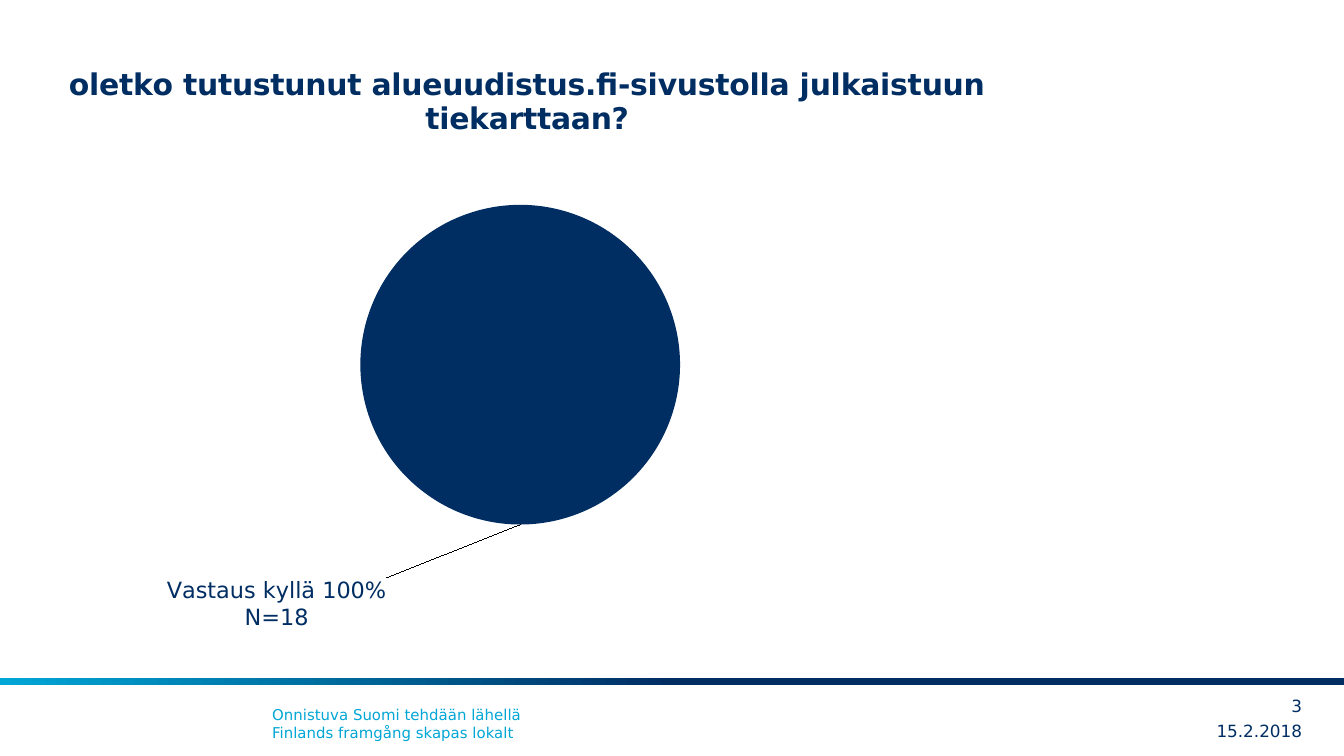
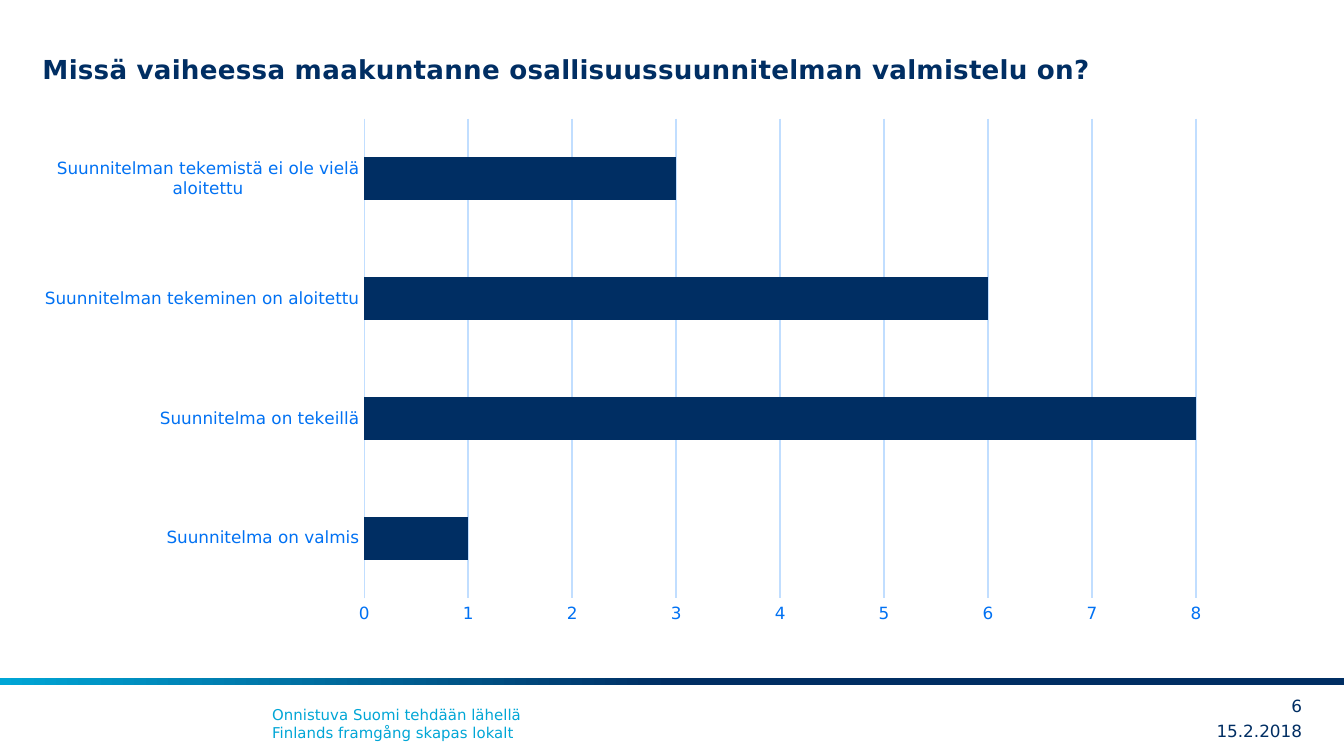
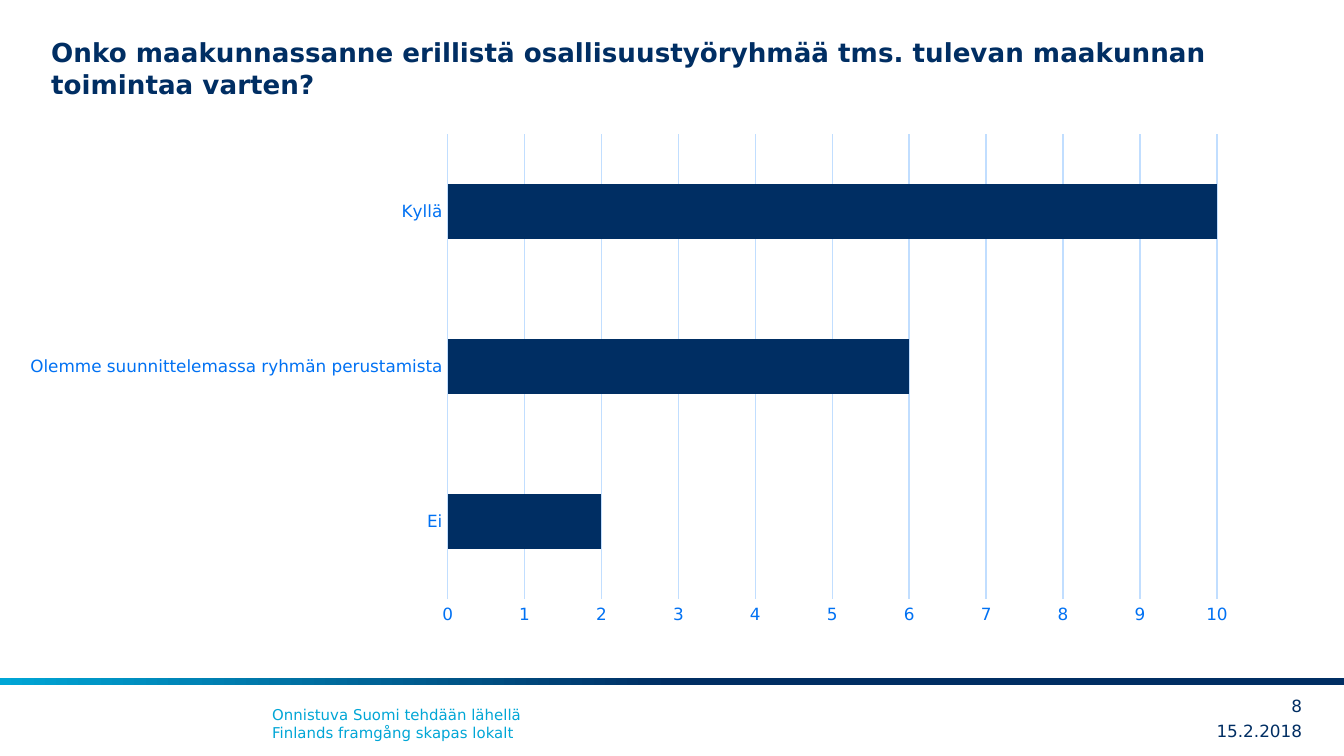
from dataclasses import dataclass

from lxml.etree import SubElement
from pptx import Presentation
from pptx.chart.data import CategoryChartData
from pptx.dml.color import RGBColor
from pptx.enum.chart import XL_CHART_TYPE, XL_LABEL_POSITION, XL_TICK_MARK
from pptx.enum.shapes import MSO_SHAPE
from pptx.enum.text import MSO_ANCHOR, PP_ALIGN
from pptx.oxml.ns import qn
from pptx.util import Emu, Pt

EMU_PER_PX = 914400 / 134.4
WIDTH, HEIGHT = 1344, 756


@dataclass(frozen=True)
class Theme:
    font: str = "DejaVu Sans"
    navy: RGBColor = RGBColor(0x00, 0x2E, 0x63)
    cyan: RGBColor = RGBColor(0x00, 0xA6, 0xD6)
    axis: RGBColor = RGBColor(0x00, 0x71, 0xF3)
    grid: RGBColor = RGBColor(0xC1, 0xDE, 0xFF)
    pie_title: int = 16
    title: int = 14
    label: int = 12
    chart: int = 10
    small: int = 9
    slogan: int = 8
    grid_line: float = 0.75


def px(length):
    return Emu(round(length * EMU_PER_PX))


def place(parent, index, inner=False, **fractions):
    """Give a chart part a manual layout, in fractions of the chart."""
    for previous in parent.findall(qn("c:layout")):
        parent.remove(previous)
    layout = parent.makeelement(qn("c:layout"))
    parent.insert(index, layout)
    manual = SubElement(layout, qn("c:manualLayout"))
    if inner:
        SubElement(manual, qn("c:layoutTarget"), val="inner")
    if index == 0 or parent.tag == qn("c:title"):
        for mode in ("xMode", "yMode"):
            SubElement(manual, qn(f"c:{mode}"), val="edge")
    for name, value in fractions.items():
        SubElement(manual, qn(f"c:{name}"), val=str(value))


class Deck:
    def __init__(self, theme):
        self.theme = theme
        self.prs = Presentation()
        self.prs.slide_width, self.prs.slide_height = px(WIDTH), px(HEIGHT)
        self.slide = None

    def style(self, font, size, color, bold=False):
        font.name, font.size, font.bold = self.theme.font, Pt(size), bold
        font.color.rgb = color

    def new_slide(self, number):
        t = self.theme
        self.slide = self.prs.slides.add_slide(self.prs.slide_layouts[6])
        self.band(678, 7)
        self.text(259, 699, 879, 50, ["Onnistuva Suomi tehdään lähellä",
                                      "Finlands framgång skapas lokalt"], t.slogan, t.cyan)
        self.corner(1169, 716, 133, "15.2.2018")
        self.corner(1245, 691, 57, str(number))

    def band(self, top, height):
        band = self.slide.shapes.add_shape(MSO_SHAPE.RECTANGLE, 0, px(top), px(WIDTH), px(height))
        band.shadow.inherit = False
        band.line.fill.background()
        band.fill.gradient()
        band.fill.gradient_angle = 180
        stops = ((0.5, self.theme.navy), (1, self.theme.cyan))
        for stop, (position, color) in zip(band.fill.gradient_stops, stops):
            stop.position, stop.color.rgb = position, color

    def text(self, left, top, width, height, lines, size, color, bold=False):
        box = self.slide.shapes.add_textbox(px(left), px(top), px(width), px(height))
        frame = box.text_frame
        frame.word_wrap = True
        paragraph = frame.paragraphs[0]
        for i, line in enumerate(lines):
            if i:
                paragraph.add_line_break()
            run = paragraph.add_run()
            run.text = line
            self.style(run.font, size, color, bold)
        return frame

    def corner(self, left, top, width, words):
        frame = self.text(left, top, width, 29, [words], self.theme.small, self.theme.navy)
        frame.margin_left = frame.margin_top = frame.margin_right = frame.margin_bottom = 0
        frame.vertical_anchor = MSO_ANCHOR.MIDDLE
        frame.paragraphs[0].alignment = PP_ALIGN.RIGHT

    def chart(self, kind, box, answers, plot_area):
        data = CategoryChartData(number_format="0")
        data.categories = list(answers)
        data.add_series("Series 1", list(answers.values()))
        chart = self.slide.shapes.add_chart(kind, *map(px, box), data).chart
        self.style(chart.font, self.theme.chart, self.theme.navy)
        chart.has_legend = chart.has_title = False
        x, y, w, h = plot_area
        place(chart.plots[0]._element.getparent(), 0, inner=True, x=x, y=y, w=w, h=h)
        return chart

    def chart_title(self, chart, words, size, x, y):
        chart.has_title = True
        run = chart.chart_title.text_frame.paragraphs[0].add_run()
        run.text = words
        self.style(run.font, size, self.theme.navy, bold=True)
        place(chart.chart_title._element, 1, x=x, y=y)

    def pie(self, box, answers, plot_area, explosion):
        chart = self.chart(XL_CHART_TYPE.PIE, box, answers, plot_area)
        plot = chart.plots[0]
        plot.vary_by_categories = False
        series = plot.series[0]
        fill = series.points[0].format.fill
        fill.solid()
        fill.fore_color.rgb = self.theme.navy
        exploded = series._element.makeelement(qn("c:explosion"), val=str(explosion))
        series._element.find(qn("c:dPt")).addprevious(exploded)
        labels = series.data_labels
        labels.show_category_name, labels.show_value = True, False
        labels.position = XL_LABEL_POSITION.OUTSIDE_END
        return chart

    def pie_label(self, chart, words, x, y):
        label = chart.plots[0].series[0].points[0].data_label
        run = label.text_frame.paragraphs[0].add_run()
        run.text = words
        self.style(run.font, self.theme.label, self.theme.navy)
        label.position = XL_LABEL_POSITION.OUTSIDE_END
        place(label._dLbl, 1, x=x, y=y)

    def bars(self, box, answers, plot_area):
        t = self.theme
        chart = self.chart(XL_CHART_TYPE.BAR_CLUSTERED, box, answers, plot_area)
        plot = chart.plots[0]
        plot.gap_width, plot.vary_by_categories = 182, False
        fill = plot.series[0].format.fill
        fill.solid()
        fill.fore_color.rgb = t.navy
        counts, choices = chart.value_axis, chart.category_axis
        for axis in (counts, choices):
            axis.major_tick_mark = axis.minor_tick_mark = XL_TICK_MARK.NONE
            self.style(axis.tick_labels.font, t.small, t.axis)
        counts.minimum_scale, counts.maximum_scale = 0, max(answers.values())
        counts.major_unit = 1
        counts.has_major_gridlines = True
        counts.format.line.fill.background()
        for line in (counts.major_gridlines.format.line, choices.format.line):
            line.color.rgb, line.width = t.grid, Pt(t.grid_line)
        return chart


def main():
    theme = Theme()
    deck = Deck(theme)

    # Road map familiarity
    deck.new_slide(3)
    familiarity = deck.pie((27, 28, 1218, 645), {"Kyllä": 100}, (0, 0.19, 0.81, 0.58), 17)
    deck.chart_title(familiarity,
                     "oletko tutustunut alueuudistus.fi-sivustolla julkaistuun tiekarttaan?",
                     theme.pie_title, 0.03, 0.05)
    deck.pie_label(familiarity, "Vastaus kyllä 100% N=18", -0.2, 0.07)

    # Stage of the participation plan
    deck.new_slide(6)
    stage = deck.bars((11, 28, 1333, 605), {
        "Suunnitelma on valmis": 1,
        "Suunnitelma on tekeillä": 8,
        "Suunnitelman tekeminen on aloitettu": 6,
        "Suunnitelman tekemistä ei ole vielä aloitettu": 3,
    }, (0.265, 0.15, 0.624, 0.793))
    deck.chart_title(stage, "Missä vaiheessa maakuntanne osallisuussuunnitelman valmistelu on?",
                     theme.title, 0.02, 0.03)

    # Separate participation group
    deck.new_slide(8)
    deck.bars((9, 93, 1239, 550), {
        "Ei": 2,
        "Olemme suunnittelemassa ryhmän perustamista": 6,
        "Kyllä": 10,
    }, (0.354, 0.075, 0.621, 0.846))
    deck.text(38, 30, 1265, 77,
              ["Onko maakunnassanne erillistä osallisuustyöryhmää tms. "
               "tulevan maakunnan toimintaa varten?"],
              theme.title, theme.navy, bold=True)

    deck.prs.save("out.pptx")


if __name__ == "__main__":
    main()
